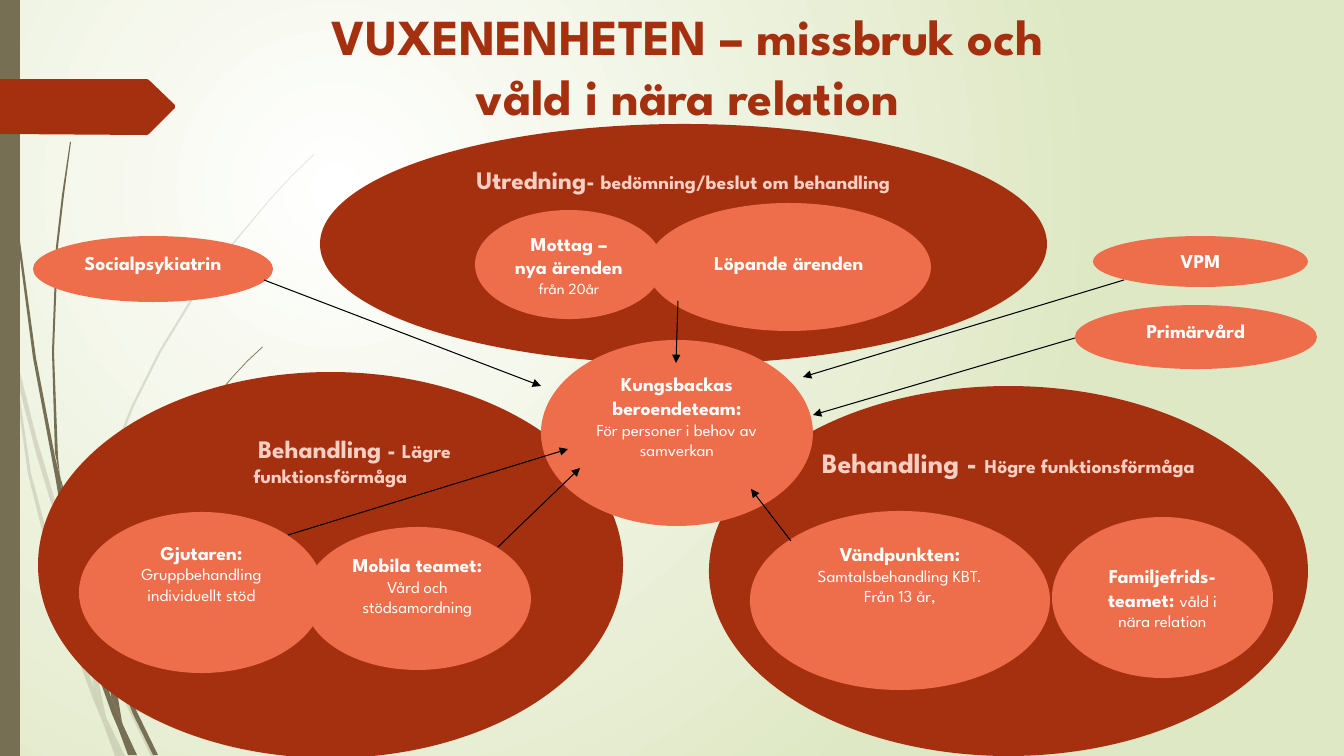
from lxml import etree
from pptx import Presentation
from pptx.dml.color import RGBColor
from pptx.enum.shapes import MSO_CONNECTOR, MSO_SHAPE
from pptx.enum.text import MSO_ANCHOR, PP_ALIGN
from pptx.oxml.ns import qn
from pptx.util import Pt

PX = 914400 / 100.8
SLIDE_W, SLIDE_H = 1344, 756
FONT = "League Spartan"
TOP, MIDDLE = MSO_ANCHOR.TOP, MSO_ANCHOR.MIDDLE
COLORS = {
    "white": "FFFFFF", "green": "DFE8C4", "olive": "766F54", "rust": "A53010",
    "coral": "EE6E4B", "pale": "F9CFC3", "black": "000000",
}

# Outlines of the grass blades, as corner points
FAINT_BLADES = [
    [(0, 284), (9, 325), (11, 353), (17, 379), (31, 473), (71, 624), (94, 688),
     (100, 713), (102, 720), (120, 756), (115, 756), (102, 720), (93, 699),
     (66, 626), (28, 474), (11, 353), (10, 347), (0, 301)],
    [(14, 348), (36, 436), (62, 524), (86, 591), (89, 601), (93, 612), (128, 698),
     (156, 756), (151, 756), (124, 700), (89, 615), (85, 604), (58, 526),
     (36, 453), (17, 379)],
    [(89, 601), (89, 589), (96, 526), (111, 466), (133, 408), (161, 352), (194, 298),
     (231, 247), (270, 200), (292, 176), (314, 155), (314, 154), (291, 176),
     (270, 199), (230, 246), (192, 297), (159, 351), (131, 407), (108, 465),
     (92, 526), (86, 589), (86, 591)],
    [(85, 604), (88, 651), (94, 688), (100, 713), (102, 720), (120, 756), (125, 756),
     (106, 717), (92, 651), (89, 615), (89, 601), (86, 591)],
]
DARK_BLADES = [
    [(3, 0), (4, 48), (7, 111), (17, 235), (33, 358), (56, 481), (69, 561), (94, 664),
     (112, 714), (118, 728), (128, 755), (137, 755), (123, 725), (111, 697), (99, 662),
     (73, 560), (65, 509), (60, 476), (55, 457), (36, 358), (19, 234), (8, 110),
     (5, 48), (4, 0)],
    [(60, 476), (94, 595), (107, 636), (111, 646), (114, 654), (137, 712), (158, 755),
     (153, 755), (133, 714), (112, 661), (107, 650), (89, 597), (65, 509)],
    [(60, 476), (58, 457), (54, 352), (58, 247), (64, 195), (71, 142), (70, 142),
     (62, 195), (56, 247), (52, 352), (55, 453)],
    [(111, 646), (112, 638), (126, 556), (159, 480), (207, 409), (233, 377), (247, 362),
     (263, 347), (262, 347), (247, 361), (233, 376), (206, 408), (157, 478),
     (123, 555), (107, 636)],
    [(107, 650), (111, 697), (123, 725), (122, 722), (112, 661), (111, 646), (107, 636)],
]
BAR = (0, 0, 20, 756)
TAG = [(0, 79), (147, 79), (149, 80), (175, 105), (175, 108), (149, 134), (147, 135), (0, 134)]

TITLE = ("VUXENENHETEN – missbruk och våld i nära relation", 36, True)
TITLE_BOX = (320, 0, 735, 132)

# Box, first-line indent, runs of (text, size, bold)
AREAS = [
    ((38, 372, 585, 386), 48, [("Behandling", 18, True), (" - ", 16, True),
                               ("Lägre funktionsförmåga", 14, True)]),
    ((709, 386, 599, 370), 0, [("Behandling - ", 20, True),
                               ("Högre funktionsförmåga", 14, True)]),
    ((320, 124, 727, 240), 0, [("Utredning", 18, True), ("- ", 16, True),
                               ("bedömning/beslut om behandling", 14, True)]),
]
# Box, anchor, extra bottom inset, paragraphs of runs
UNITS = [
    ((647, 203, 284, 128), MIDDLE, 8, [[("Löpande ärenden", 14, True)]]),
    ((475, 210, 188, 109), MIDDLE, 0,
     [[("Mottag – nya ärenden ", 14, True), ("från 20år", 11, False)]]),
    ((79, 512, 245, 161), TOP, 0,
     [[("Gjutaren:", 14, True)], [("Gruppbehandling individuellt stöd", 12, False)]]),
    ((304, 527, 227, 143), TOP, 0,
     [[("Mobila teamet:", 14, True)], [("Vård och stödsamordning", 12, False)]]),
    ((750, 511, 300, 179), TOP, 0,
     [[("Vändpunkten:", 14, True)], [("Samtalsbehandling KBT. Från 13 år,", 12, False)]]),
    ((1052, 517, 221, 161), MIDDLE, 0,
     [[("Familjefrids-teamet: ", 14, True), ("våld i nära relation", 12, False)]]),
    ((541, 340, 272, 186), TOP, 0,
     [[("Kungsbackas beroendeteam:", 14, True)],
      [("För personer i behov av samverkan", 12, False)]]),
    ((1093, 236, 215, 51), TOP, 0, [[("VPM", 14, True)]]),
    ((33, 236, 240, 66), TOP, 0, [[("Socialpsykiatrin", 14, True)]]),
    ((1075, 305, 242, 64), TOP, 0, [[("Primärvård", 14, True)]]),
]
ARROWS = [
    (1075, 338, 813, 415), (1124, 280, 803, 377), (264, 280, 541, 386),
    (498, 547, 580, 468), (791, 541, 751, 489), (288, 535, 568, 449),
    (678, 301, 676, 363),
]


def px(n):
    return round(n * PX)


def rgb(name):
    return RGBColor.from_string(COLORS[name])


def paint(sp, color, alpha=None):
    sp.shadow.inherit = False
    sp.fill.solid()
    sp.fill.fore_color.rgb = rgb(color)
    sp.line.fill.background()
    if alpha:
        clr = sp.fill._xPr.find(qn("a:solidFill"))[0]
        etree.SubElement(clr, qn("a:alpha")).set("val", str(alpha * 1000))


def add_outline(shapes, points, color, alpha=None):
    builder = shapes.build_freeform(*points[0], scale=PX)
    builder.add_line_segments(points[1:], close=True)
    paint(builder.convert_to_shape(), color, alpha)


def write(sp, paragraphs, color, anchor=TOP, indent=0, lift=0):
    """Fill sp with centred paragraphs; lift is extra bottom inset."""
    tf = sp.text_frame
    tf.word_wrap = True
    tf.vertical_anchor = anchor
    tf.margin_bottom += px(lift)
    for i, runs in enumerate(paragraphs):
        p = tf.add_paragraph() if i else tf.paragraphs[0]
        p.alignment = PP_ALIGN.CENTER
        p.font.name = FONT
        p.font.color.rgb = rgb(color)
        if indent:
            p._p.get_or_add_pPr().set("indent", str(px(indent)))
        for text, size, bold in runs:
            r = p.add_run()
            r.text = text
            r.font.name = FONT
            r.font.size = Pt(size)
            r.font.bold = bold
            r.font.color.rgb = rgb(color)


def add_block(shapes, kind, box, color):
    sp = shapes.add_shape(kind, *map(px, box))
    paint(sp, color)
    return sp


def add_arrow(shapes, ends):
    line = shapes.add_connector(MSO_CONNECTOR.STRAIGHT, *map(px, ends))
    line.line.color.rgb = rgb("black")
    line.line.width = Pt(0.75)
    etree.SubElement(line.line._get_or_add_ln(), qn("a:tailEnd")).set("type", "triangle")
    etree.SubElement(line._element.spPr, qn("a:effectLst"))


def set_background(slide):
    """Radial gradient, white in the upper left quarter."""
    fill = slide.background.fill
    fill.gradient()
    for stop, name, position in zip(fill.gradient_stops, ("white", "green"), (0, 1)):
        stop.color.rgb = rgb(name)
        stop.position = position
    grad = slide._element.find(".//" + qn("a:gradFill"))
    grad.remove(grad.find(qn("a:lin")))
    circle = etree.SubElement(grad, qn("a:path"))
    circle.set("path", "circle")
    rect = etree.SubElement(circle, qn("a:fillToRect"))
    for side, share in zip("ltrb", (50, 50, 100, 100)):
        rect.set(side, str(share * 1000))


def main():
    prs = Presentation()
    prs.slide_width, prs.slide_height = px(SLIDE_W), px(SLIDE_H)
    slide = prs.slides.add_slide(prs.slide_layouts[6])
    shapes = slide.shapes
    set_background(slide)
    for blade in FAINT_BLADES:
        add_outline(shapes, blade, "olive", 20)
    for blade in DARK_BLADES:
        add_outline(shapes, blade, "olive")
    add_block(shapes, MSO_SHAPE.RECTANGLE, BAR, "olive")
    add_outline(shapes, TAG, "rust")
    for box, indent, runs in AREAS:
        write(add_block(shapes, MSO_SHAPE.OVAL, box, "rust"), [runs], "pale", indent=indent)
    write(shapes.add_textbox(*map(px, TITLE_BOX)), [[TITLE]], "rust")
    for box, anchor, lift, paragraphs in UNITS:
        sp = add_block(shapes, MSO_SHAPE.OVAL, box, "coral")
        write(sp, paragraphs, "white", anchor, lift=lift)
    for ends in ARROWS:
        add_arrow(shapes, ends)
    prs.save("out.pptx")


if __name__ == "__main__":
    main()
